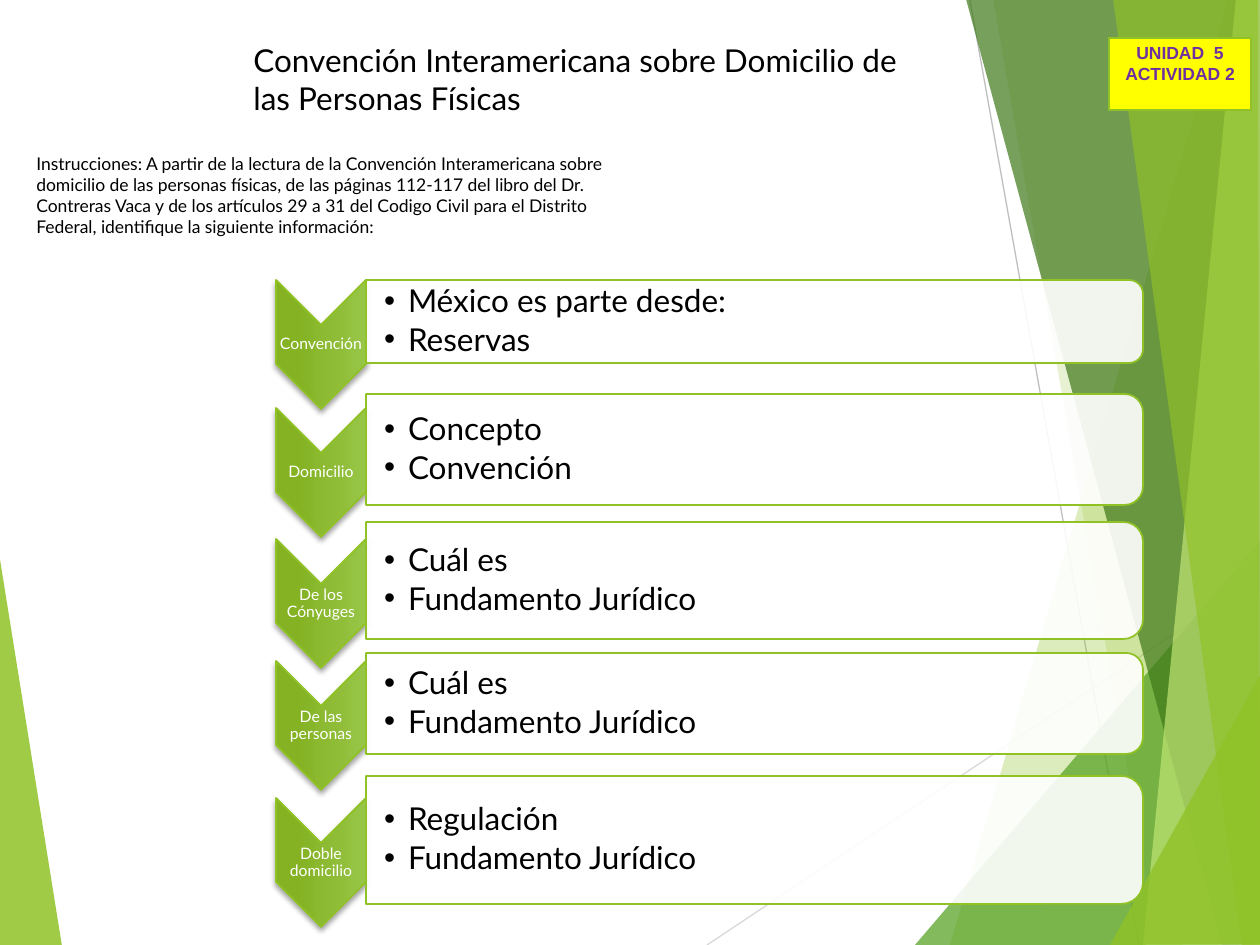
from lxml import etree
from pptx import Presentation, util as u
from pptx.dml.color import RGBColor
from pptx.enum import shapes, text
from pptx.oxml.ns import qn

PX = 914400 / 126
GREEN = "90C226"
TITLE = "Convención Interamericana sobre Domicilio de las Personas Físicas"
INTRO = ("Instrucciones: A partir de la lectura de la Convención Interamericana "
         "sobre domicilio de las personas físicas, de las páginas 112-117 del libro "
         "del Dr. Contreras Vaca y de los artículos 29 a 31 del Codigo Civil para el "
         "Distrito Federal, identifique la siguiente información:")
BASIS = "Fundamento Jurídico"

# label, chevron top, panel top, panel height, bullets
ROWS = [
    ("Convención", 280, 280, 83, ["México es parte desde:", "Reservas"]),
    ("Domicilio", 408, 394, 111, ["Concepto", "Convención"]),
    ("De los Cónyuges", 539, 522, 117, ["Cuál es", BASIS]),
    ("De las personas", 661, 653, 101, ["Cuál es", BASIS]),
    ("Doble domicilio", 798, 776, 128, ["Regulación", BASIS]),
]
# colour, opacity, corner points
LEFT = (GREEN, 85, [(-1, 553), (62, 946), (-1, 945)])
FACETS = [
    (GREEN, 30, [(1228, 0), (950, 945), (1262, 946), (1261, 1)]),
    (GREEN, 20, [(993, -1), (1158, 945), (1261, 945), (1261, -1)]),
    ("54A021", 72, [(915, 945), (1260, 541), (1261, 945)]),
    ("3F7819", 70, [(966, -1), (1222, 945), (1261, 944), (1261, -1)]),
    ("C0E474", 70, [(1236, -1), (1143, 945), (1261, 945), (1260, -1)]),
    (GREEN, 65, [(1113, -1), (1242, 945), (1260, 945), (1258, -1)]),
    (GREEN, 80, [(1110, 945), (1261, 674), (1261, 944)]),
]
LINES = [("D9D9D9", 707, 945, 1261, 576), ("BFBFBF", 970, 0, 1139, 945)]

deck = Presentation()
deck.slide_width, deck.slide_height = u.Inches(10), u.Inches(7.5)
slide = deck.slides.add_slide(deck.slide_layouts[6])
items = slide.shapes


def px(*vals):
    return [u.Emu(round(v * PX)) for v in vals]


def rgb(code):
    return RGBColor.from_string(code)


def paint(shape, code, alpha=100):
    shape.shadow.inherit = False
    shape.fill.solid()
    shape.fill.fore_color.rgb = rgb(code)
    if alpha < 100:
        tint = shape.fill._xPr.find(".//" + qn("a:srgbClr"))
        etree.SubElement(tint, qn("a:alpha"), val=str(alpha * 1000))


def edge(shape, width):
    shape.line.color.rgb = rgb(GREEN)
    shape.line.width = u.Pt(width)


def facet(code, alpha, pts):
    pen = items.build_freeform(*pts[0], scale=PX)
    pen.add_line_segments(pts[1:], close=True)
    shape = pen.convert_to_shape()
    paint(shape, code, alpha)
    shape.line.fill.background()


def turned(kind, x, y, w, h):
    """Shape turned a quarter clockwise that shows in the box x, y, w, h."""
    shape = items.add_shape(kind, *px(x + (w - h) / 2, y + (h - w) / 2, h, w))
    shape.rotation = 90
    return shape


def write(shape, lines, size, code="000000", font="Lato", align=None, bold=None,
          gap=0, lead=None, pads=None, mid=False, dot=False):
    frame = shape.text_frame
    frame.word_wrap = True
    frame.vertical_anchor = text.MSO_ANCHOR.MIDDLE if mid else text.MSO_ANCHOR.TOP
    if pads:
        (frame.margin_left, frame.margin_top,
         frame.margin_right, frame.margin_bottom) = px(*pads)
    frame.text = "\n".join(lines)
    for para in frame.paragraphs:
        para.alignment = align
        para.line_spacing = lead
        para.space_after = u.Pt(gap)
        if dot:
            props = para._p.get_or_add_pPr()
            props.set("marL", str(px(24)[0]))
            props.set("indent", str(px(-24)[0]))
            etree.SubElement(props, qn("a:buFont"), typeface="Arial")
            etree.SubElement(props, qn("a:buChar"), char="•")
        for run in para.runs:
            run.font.size, run.font.name, run.font.bold = u.Pt(size), font, bold
            run.font.color.rgb = rgb(code)


def chevron(x, y, w, h):
    shape = turned(shapes.MSO_SHAPE.CHEVRON, x, y, w, h)
    shape.shadow.inherit = False
    shape.fill.gradient()
    shape.fill.gradient_angle = 270
    for stop, (code, pos) in zip(shape.fill.gradient_stops,
                                 [("97C547", 0), ("84B223", 0.78)]):
        stop.color.rgb, stop.position = rgb(code), pos
    edge(shape, 1)
    glow = etree.SubElement(
        shape._element.spPr.find(qn("a:effectLst")), qn("a:outerShdw"),
        blurRad=str(u.Pt(3)), dist=str(u.Pt(2)), dir="5400000", rotWithShape="0")
    tint = etree.SubElement(glow, qn("a:srgbClr"), val="000000")
    etree.SubElement(tint, qn("a:alpha"), val="35000")


# Background facets and thin lines
facet(*LEFT)
for code, *ends in LINES:
    line = items.add_connector(shapes.MSO_CONNECTOR.STRAIGHT, *px(*ends))
    line.line.color.rgb = rgb(code)
    line.line.width = u.Pt(0.75)
    etree.SubElement(line._element.spPr, qn("a:effectLst"))
for part in FACETS:
    facet(*part)

# Chevron list
CX, CW, CH, PW = 276, 90, 129, 777
BX = CX + CW
for label, top, y, high, points in ROWS:
    chevron(CX, top, CW, CH)
    tag = items.add_textbox(*px(CX, top + 45, CW, 39))
    write(tag, [label], 9, "FFFFFF", align=text.PP_ALIGN.CENTER, lead=0.9,
          pads=(1, 1, 1, 1), mid=True)
    panel = turned(shapes.MSO_SHAPE.ROUND_2_SAME_RECTANGLE, BX, y, PW, high)
    paint(panel, "FFFFFF", 90)
    edge(panel, 1)
    body = items.add_textbox(*px(BX, y + 4, PW - 5, high - 8))
    write(body, points, 18, gap=2.7, lead=0.9, pads=(18, 1, 1, 1),
          mid=True, dot=True)

# Title, instructions and unit badge
write(items.add_textbox(*px(241, 35, 709, 89)), [TITLE], 18)
write(items.add_textbox(*px(24, 147, 630, 97)), [INTRO], 10)
badge = items.add_shape(shapes.MSO_SHAPE.RECTANGLE, *px(1109, 38, 142, 72))
paint(badge, "FFFF00")
edge(badge, 0.75)
write(badge, ["UNIDAD  5", "ACTIVIDAD 2"], 10, "7030A0", "Arial",
      text.PP_ALIGN.CENTER, True, pads=(8, 4, 8, 4))

deck.save("out.pptx")
